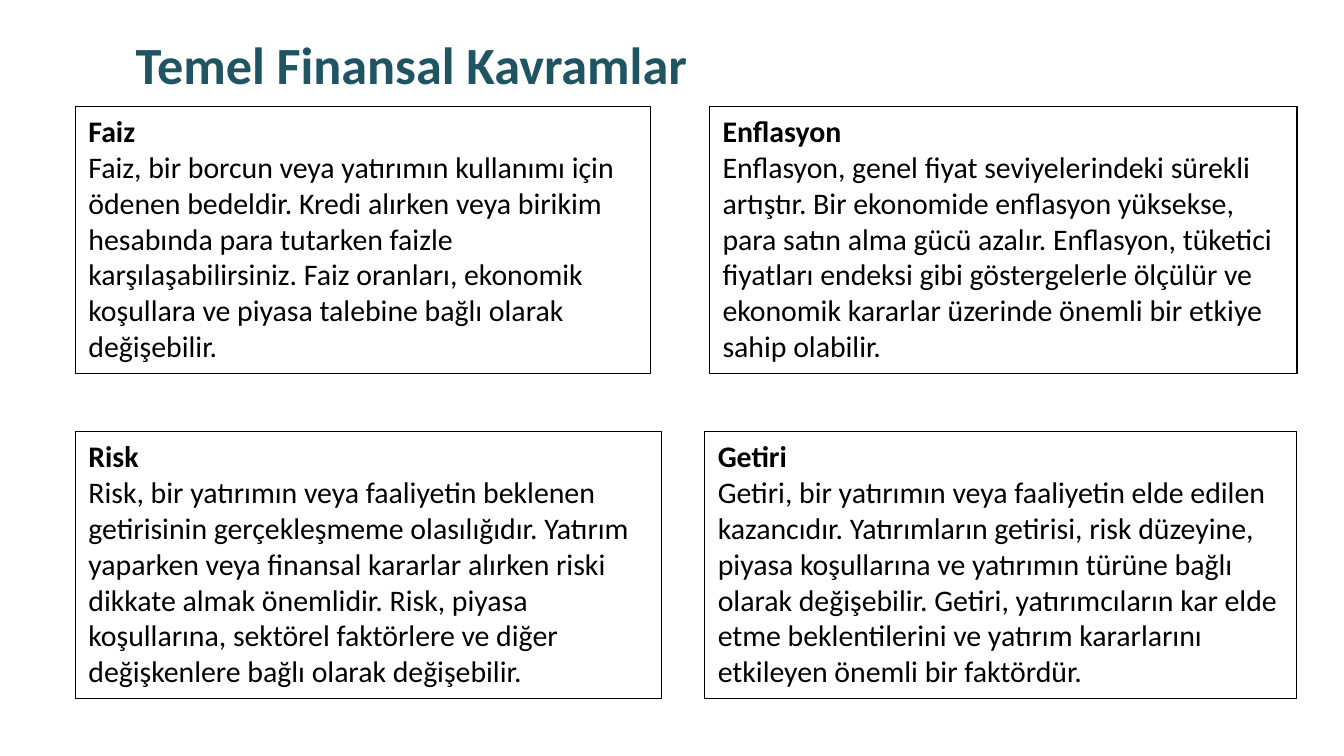
from pptx import Presentation
from pptx.dml.color import RGBColor
from pptx.enum import shapes, text
from pptx.util import Pt

FONT = "Calibri"
TITLE_BOX = (65.5, 13.7, 360, 41)
ROW_TOPS = (56.9, 231.1)
CARD_HEIGHT = 143.3

# Each row: (left, width, heading, body) per card
ROWS = [
    [
        (40.3, 308.2, "Faiz",
         "Faiz, bir borcun veya yatırımın kullanımı için ödenen bedeldir. Kredi alırken veya "
         "birikim hesabında para tutarken faizle karşılaşabilirsiniz. Faiz oranları, ekonomik "
         "koşullara ve piyasa talebine bağlı olarak değişebilir."),
        (380, 314.8, "Enflasyon",
         "Enflasyon, genel fiyat seviyelerindeki sürekli artıştır. Bir ekonomide enflasyon "
         "yüksekse, para satın alma gücü azalır. Enflasyon, tüketici fiyatları endeksi gibi "
         "göstergelerle ölçülür ve ekonomik kararlar üzerinde önemli bir etkiye sahip olabilir."),
    ],
    [
        (40.3, 314.2, "Risk",
         "Risk, bir yatırımın veya faaliyetin beklenen getirisinin gerçekleşmeme olasılığıdır. "
         "Yatırım yaparken veya finansal kararlar alırken riski dikkate almak önemlidir. Risk, "
         "piyasa koşullarına, sektörel faktörlere ve diğer değişkenlere bağlı olarak değişebilir."),
        (377.5, 317.2, "Getiri",
         "Getiri, bir yatırımın veya faaliyetin elde edilen kazancıdır. Yatırımların getirisi, "
         "risk düzeyine, piyasa koşullarına ve yatırımın türüne bağlı olarak değişebilir. Getiri, "
         "yatırımcıların kar elde etme beklentilerini ve yatırım kararlarını etkileyen önemli bir "
         "faktördür."),
    ],
]


def color(value):
    return RGBColor.from_string(value)


def set_attributes(target, values):
    for name, value in values.items():
        setattr(target, name, value)


def format_frame(frame, anchor):
    set_attributes(frame, {
        "word_wrap": True, "auto_size": text.MSO_AUTO_SIZE.NONE, "vertical_anchor": anchor,
        "margin_left": Pt(7.2), "margin_right": Pt(7.2),
        "margin_top": Pt(3.6), "margin_bottom": Pt(3.6),
    })


def write(para, content, size, bold, ink):
    set_attributes(para, {"alignment": text.PP_ALIGN.LEFT, "line_spacing": 1.0,
                          "space_before": Pt(0)})
    span = para.add_run()
    span.text = content
    set_attributes(span.font, {"name": FONT, "size": Pt(size), "bold": bold})
    span.font.color.rgb = color(ink)


def place_title(page, box, content):
    title = page.shapes.title
    set_attributes(title, dict(zip(("left", "top", "width", "height"), map(Pt, box))))
    format_frame(title.text_frame, text.MSO_ANCHOR.TOP)
    write(title.text_frame.paragraphs[0], content, 28, True, "1F5463")


def place_card(page, box, heading, body):
    card = page.shapes.add_shape(shapes.MSO_SHAPE.RECTANGLE, *map(Pt, box))
    card.shadow.inherit = False
    card.fill.background()
    card.line.color.rgb = color("000000")
    card.line.width = Pt(0.75)
    frame = card.text_frame
    format_frame(frame, text.MSO_ANCHOR.TOP)
    write(frame.paragraphs[0], heading, 16, True, "000000")
    write(frame.add_paragraph(), body, 16, False, "000000")


def main():
    deck = Presentation()
    set_attributes(deck, {"slide_width": Pt(720), "slide_height": Pt(405)})
    page = deck.slides.add_slide(deck.slide_layouts[5])

    # Title
    place_title(page, TITLE_BOX, "Temel Finansal Kavramlar")

    # Concept cards
    for top, row in zip(ROW_TOPS, ROWS):
        for left, width, heading, body in row:
            place_card(page, (left, top, width, CARD_HEIGHT), heading, body)

    deck.save("out.pptx")


if __name__ == "__main__":
    main()
